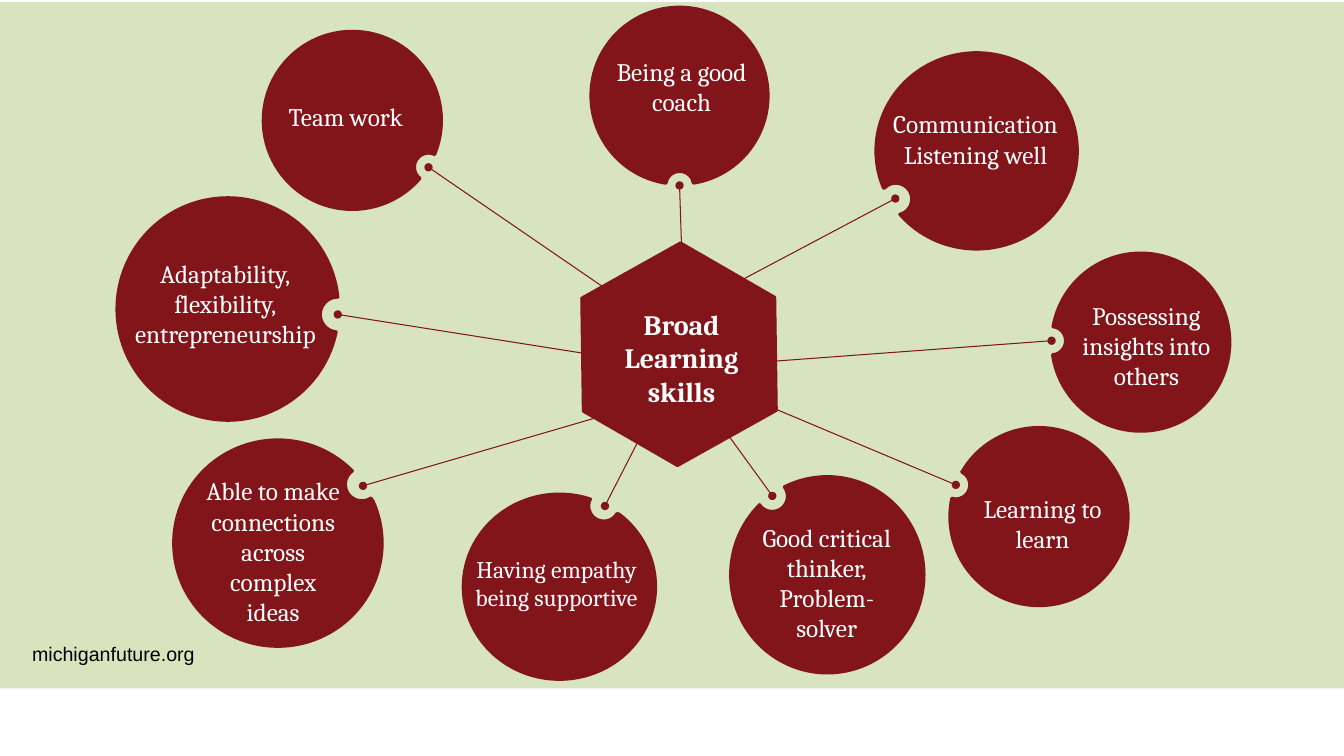
import math

from lxml import etree
from pptx import Presentation
from pptx.dml.color import RGBColor
from pptx.enum import shapes, text
from pptx.oxml.ns import qn
from pptx.util import Inches, Pt

COLORS = {"maroon": "81151A", "green": "D7E4BD", "white": "FFFFFF", "black": "000000"}
NOTCH_RATIO = 0.078  # notch radius as a share of the bubble width

# Each skill: bubble box, line start, line end (dot), text box, paragraphs, size
SKILLS = [
    ((10.43, 2.51, 1.77, 1.77), (6.91, 3.64), (10.43, 3.38),
     (10.59, 2.93, 1.56, 1.01), ["Possessing insights into others"], 18),
    ((1.16, 1.96, 2.2, 2.21), (7.34, 3.75), (3.35, 3.12),
     (1.19, 2.51, 2.09, 1.01), ["Adaptability,", "flexibility,", "entrepreneurship"], 18),
    ((9.42, 4.24, 1.77, 1.77), (7.53, 3.99), (9.48, 4.81),
     (9.56, 4.84, 1.56, 0.71), ["Learning to learn"], 18),
    ((7.24, 4.73, 1.92, 1.95), (6.87, 3.83), (7.66, 4.92),
     (7.37, 5.13, 1.66, 1.31), ["Good critical thinker,", "Problem-solver"], 18),
    ((4.58, 4.89, 1.91, 1.84), (6.43, 4.18), (6, 5.02),
     (4.56, 5.45, 1.92, 0.67), ["Having empathy being supportive"], 17),
    ((1.72, 4.36, 2.07, 2.05), (6.03, 4.11), (3.6, 4.82),
     (1.91, 4.67, 1.6, 1.62), ["Able to make connections across complex ideas"], 18),
    ((5.86, 0.07, 1.76, 1.76), (6.78, 3.06), (6.74, 1.84),
     (5.9, 0.51, 1.72, 0.71), ["Being a good coach"], 18),
    ((8.69, 0.53, 2, 1.95), (7.22, 2.85), (8.88, 1.97),
     (8.3, 1.03, 2.75, 0.71), ["Communication", "Listening well"], 18),
    ((2.61, 0.31, 1.77, 1.77), (6.03, 2.88), (4.25, 1.66),
     (2.57, 0.96, 1.72, 0.4), ["Team work"], 18),
]


def rgb(name):
    return RGBColor.from_string(COLORS[name])


def paint(sp, fill, line=None):
    sp.shadow.inherit = False
    sp.fill.solid()
    sp.fill.fore_color.rgb = rgb(fill)
    if line:
        sp.line.color.rgb = rgb(line)
        sp.line.width = Pt(2)
    else:
        sp.line.fill.background()


def add_text(s, box, lines, size=18, font="Cambria", color="white", bold=False,
             align=text.PP_ALIGN.CENTER):
    tf = s.shapes.add_textbox(*map(Inches, box)).text_frame
    tf.word_wrap = True
    for i, line in enumerate(lines):
        p = tf.paragraphs[0] if i == 0 else tf.add_paragraph()
        p.alignment = align
        r = p.add_run()
        r.text = line
        r.font.size, r.font.name, r.font.bold = Pt(size), font, bold
        r.font.color.rgb = rgb(color)


def add_spoke(s, start, dot):
    """Thin line that ends in a round dot."""
    c = s.shapes.add_connector(shapes.MSO_CONNECTOR.STRAIGHT, *map(Inches, start + dot))
    c.line.color.rgb = rgb("maroon")
    c.line.width = Pt(0.75)
    etree.SubElement(c.line._get_or_add_ln(), qn("a:tailEnd"), type="oval")
    etree.SubElement(c._element.spPr, qn("a:effectLst"))


def add_arc(outline, rx, ry, start, sweep):
    """Append an arc; angles are in radians, clockwise."""
    start, sweep = math.degrees(start) % 360, math.degrees(sweep)
    etree.SubElement(outline, qn("a:arcTo"), wR=str(Inches(rx)), hR=str(Inches(ry)),
                     stAng=str(round(start * 60000)), swAng=str(round(sweep * 60000)))


def add_bubble(s, box, dot):
    """Ellipse with a round bite taken out around the dot."""
    x, y, w, h = box
    rx, ry = w / 2, h / 2
    dx, dy = dot[0] - x, dot[1] - y
    radius = NOTCH_RATIO * w

    def rim(a):
        return rx + rx * math.cos(a), ry + ry * math.sin(a)

    facing = math.atan2((dy - ry) / ry, (dx - rx) / rx)
    angles = [facing + math.radians(d) for d in range(360)]
    angles = [a for a in angles if math.dist(rim(a), (dx, dy)) > radius]
    first, last = angles[0], angles[-1]
    bite_end, bite_start = [math.atan2(py - dy, px - dx) for px, py in map(rim, (first, last))]

    fb = s.shapes.build_freeform(Inches(x), Inches(y))
    corners = [(x + w, y), (x + w, y + h), (x, y + h)]
    fb.add_line_segments([(Inches(px), Inches(py)) for px, py in corners], close=True)
    sp = fb.convert_to_shape()
    outline = next(sp._element.iter(qn("a:path")))
    for el in list(outline):
        outline.remove(el)
    move = etree.SubElement(outline, qn("a:moveTo"))
    px, py = rim(first)
    etree.SubElement(move, qn("a:pt"), x=str(Inches(px)), y=str(Inches(py)))
    add_arc(outline, rx, ry, first, last - first)
    add_arc(outline, radius, radius, bite_start, -((bite_start - bite_end) % (2 * math.pi)))
    etree.SubElement(outline, qn("a:close"))
    paint(sp, "maroon", "maroon")


def add_hub(s):
    sp = s.shapes.add_shape(shapes.MSO_SHAPE.HEXAGON,
                            *map(Inches, (5.62, 2.55, 2.23, 1.93)))
    sp.adjustments[0] = 0.298
    sp.rotation = 30
    paint(sp, "maroon", "maroon")
    add_text(s, (6.04, 3, 1.44, 1.11), ["Broad", "Learning skills"], size=20, bold=True)


def main():
    prs = Presentation()
    prs.slide_width, prs.slide_height = Inches(13.33), Inches(7.5)
    s = prs.slides.add_slide(prs.slide_layouts[6])

    panel = s.shapes.add_shape(shapes.MSO_SHAPE.RECTANGLE,
                               *map(Inches, (0, 0.02, 13.33, 6.81)))
    paint(panel, "green")
    add_text(s, (0.22, 6.32, 2.14, 0.34), ["michiganfuture.org"], size=14, font="Arial",
             color="black", align=text.PP_ALIGN.LEFT)

    for bubble, start, dot, label, lines, size in SKILLS:
        add_spoke(s, start, dot)
        add_bubble(s, bubble, dot)
        add_text(s, label, lines, size=size)
    add_hub(s)
    prs.save("out.pptx")


if __name__ == "__main__":
    main()
